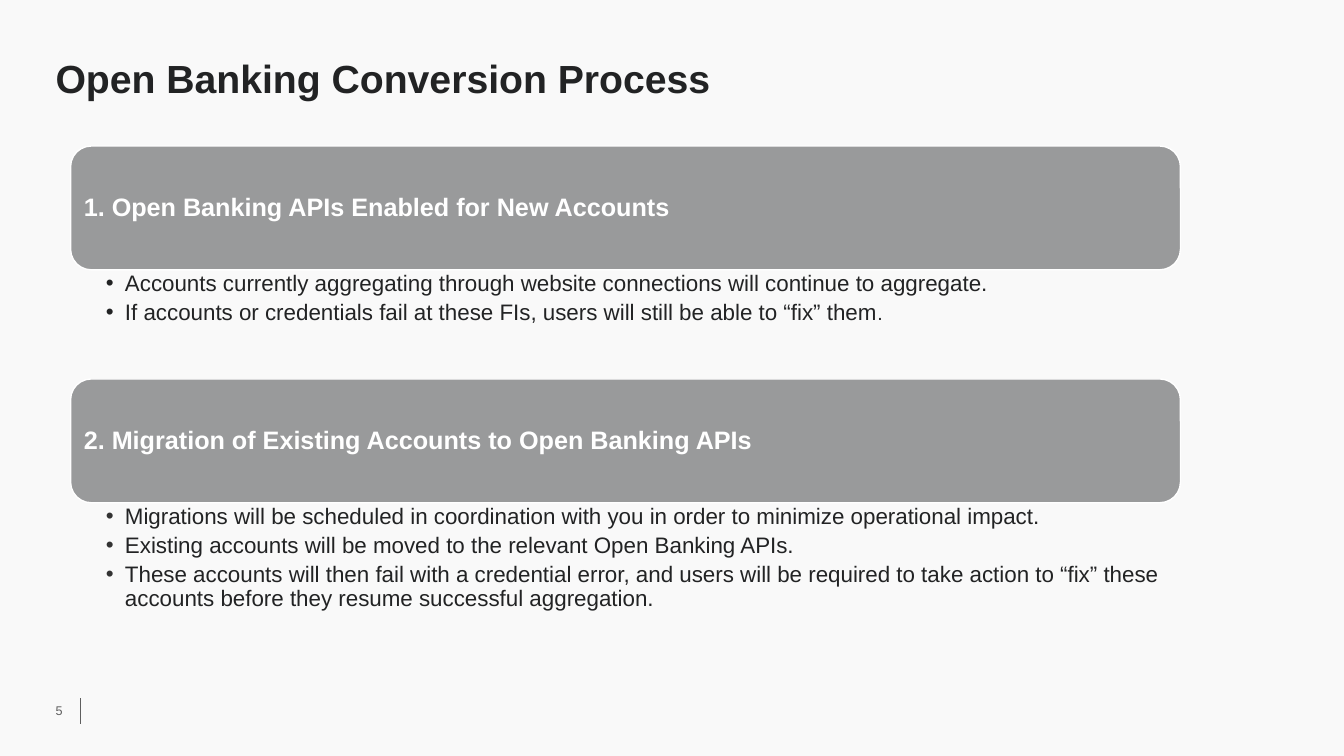
from lxml.etree import SubElement
from pptx import Presentation
from pptx.dml.color import RGBColor
from pptx.enum.shapes import MSO_CONNECTOR, MSO_SHAPE
from pptx.enum.text import MSO_ANCHOR, MSO_AUTO_SIZE, PP_ALIGN
from pptx.oxml.ns import qn
from pptx.util import Cm, Pt

STEPS = [
    ("1. Open Banking APIs Enabled for New Accounts", "222324", [
        [("Accounts currently aggregating through website connections will continue to aggregate.", 16)],
        [("If accounts or credentials fail at these FIs, users will still be able to “fix” them", 16), (".", 14)],
    ]),
    ("2. Migration of Existing Accounts to Open Banking APIs", "333333", [
        [("Migrations will be scheduled in coordination with you in order to minimize operational impact.", 16)],
        [("Existing accounts will be moved to the relevant Open Banking APIs.", 16)],
        [("These accounts will then fail with a credential error, and users will be required to take action "
          "to “fix” these accounts before they resume successful aggregation.", 16)],
    ]),
]
STEP_LEFT, STEP_WIDTH = 1.78, 27.97
FIRST_STEP_TOP, STEP_PITCH = 3.68, 5.87
BAR_HEIGHT, DETAILS_HEIGHT = 3.12, 2.77


def color(hex_string):
    return RGBColor.from_string(hex_string)


def add_text(paragraph, text, size=16, fill="222324", bold=False):
    run = paragraph.add_run()
    run.text = text
    run.font.name = "Arial"
    run.font.size = Pt(size)
    run.font.bold = bold
    run.font.color.rgb = color(fill)


class SlideBuilder:
    dark, gray, muted, white = "222324", "999A9B", "5E5E5E", "FFFFFF"

    def __init__(self, presentation, background):
        self.slide = presentation.slides.add_slide(presentation.slide_layouts[5])
        self.slide.background.fill.solid()
        self.slide.background.fill.fore_color.rgb = color(background)

    def set_frame(self, shape, insets, anchor=MSO_ANCHOR.TOP):
        frame = shape.text_frame
        frame.word_wrap = True
        frame.auto_size = MSO_AUTO_SIZE.NONE
        frame.vertical_anchor = anchor
        frame.margin_left, frame.margin_top, frame.margin_right, frame.margin_bottom = map(Cm, insets)
        return frame

    def first_paragraph(self, frame, line_spacing=0.9):
        paragraph = frame.paragraphs[0]
        paragraph.alignment = PP_ALIGN.LEFT
        paragraph.line_spacing = line_spacing
        return paragraph

    def title(self, text, left, top, width, height):
        shape = self.slide.shapes.title
        shape.left, shape.top, shape.width, shape.height = map(Cm, (left, top, width, height))
        paragraph = self.first_paragraph(self.set_frame(shape, (0, 0.13, 0, 0.13)))
        paragraph.space_before = Pt(16)
        add_text(paragraph, text, size=28, fill=self.dark, bold=True)

    def bar(self, text, left, top, width, height):
        shape = self.slide.shapes.add_shape(
            MSO_SHAPE.ROUNDED_RECTANGLE, Cm(left), Cm(top), Cm(width), Cm(height))
        shape.shadow.inherit = False
        shape.fill.solid()
        shape.fill.fore_color.rgb = color(self.gray)
        shape.line.color.rgb = color(self.white)
        shape.line.width = Pt(1)
        frame = self.set_frame(shape, (0.18, 0.18, 0.18, 0.18), MSO_ANCHOR.MIDDLE)
        add_text(self.first_paragraph(frame), text, size=18, fill=self.white, bold=True)

    def bullets(self, items, bullet_color, left, top, width, height):
        shape = self.slide.shapes.add_textbox(Cm(left), Cm(top), Cm(width), Cm(height))
        frame = self.set_frame(shape, (0.89, 0.05, 0.3, 0.05))
        for index, runs in enumerate(items):
            paragraph = frame.add_paragraph() if index else frame.paragraphs[0]
            paragraph.level = 1
            paragraph.line_spacing = 0.9
            paragraph.space_after = Pt(3.7)
            self.add_bullet(paragraph, bullet_color)
            for text, size in runs:
                add_text(paragraph, text, size=size, fill=self.dark)

    def add_bullet(self, paragraph, bullet_color):
        properties = paragraph._p.get_or_add_pPr()
        properties.set("marL", str(Cm(0.48)))
        properties.set("indent", str(-Cm(0.48)))
        SubElement(SubElement(properties, qn("a:buClr")), qn("a:srgbClr"), val=bullet_color)
        SubElement(properties, qn("a:buFont"), typeface="Arial")
        SubElement(properties, qn("a:buChar"), char="•")

    def page_number(self, text, left, top, width, height):
        shape = self.slide.shapes.add_textbox(Cm(left), Cm(top), Cm(width), Cm(height))
        frame = self.set_frame(shape, (0, 0.13, 0, 0.13), MSO_ANCHOR.MIDDLE)
        add_text(self.first_paragraph(frame, 1.0), text, size=9, fill=self.muted)

    def vertical_line(self, left, top, bottom):
        line = self.slide.shapes.add_connector(
            MSO_CONNECTOR.STRAIGHT, Cm(left), Cm(top), Cm(left), Cm(bottom))
        line.line.color.rgb = color(self.muted)
        line.line.width = Pt(0.5)
        SubElement(line._element.spPr, qn("a:effectLst"))


def main():
    presentation = Presentation()
    presentation.slide_width = Cm(33.87)
    presentation.slide_height = Cm(19.05)
    builder = SlideBuilder(presentation, "F9F9F9")
    builder.vertical_line(2.03, 17.6, 18.24)
    builder.title("Open Banking Conversion Process", 1.4, 1.37, 28.7, 1)
    builder.page_number("5", 1.4, 17.4, 0.63, 1.02)
    for index, (heading, bullet_color, items) in enumerate(STEPS):
        top = FIRST_STEP_TOP + index * STEP_PITCH
        builder.bar(heading, STEP_LEFT, top, STEP_WIDTH, BAR_HEIGHT)
        builder.bullets(items, bullet_color, STEP_LEFT, top + BAR_HEIGHT, STEP_WIDTH, DETAILS_HEIGHT)
    presentation.save("out.pptx")


if __name__ == "__main__":
    main()
